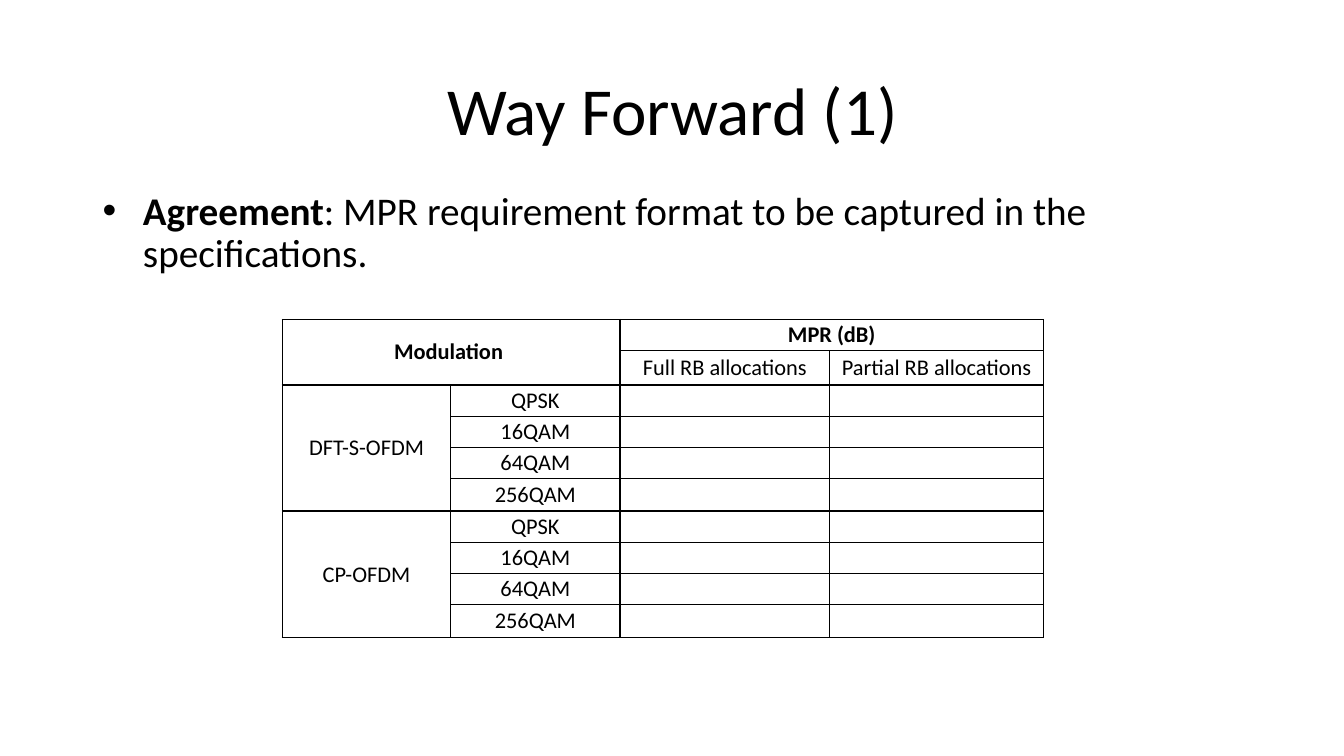
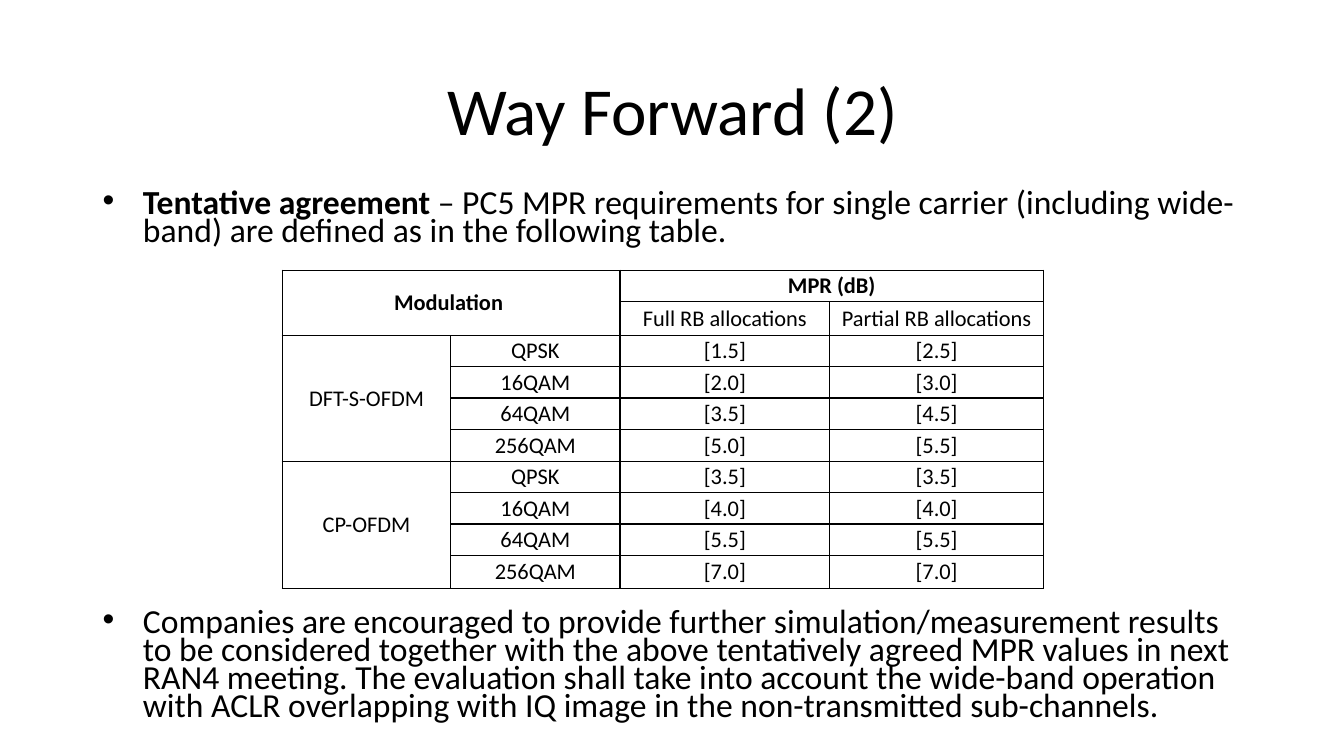
"""Build two slides on the MPR way forward, each with a requirement table."""
from itertools import product

from lxml.etree import SubElement
from pptx import Presentation
from pptx.dml.color import RGBColor
from pptx.enum.text import MSO_ANCHOR, MSO_AUTO_SIZE, PP_ALIGN
from pptx.oxml.ns import qn
from pptx.util import Inches, Pt

FONT = "Calibri"
INK = "000000"
LEFT, WIDTH = 0.92, 11.5
TITLE_BOX = (LEFT, 0.4, WIDTH, 1.45)

TABLE_LEFT = 2.8
COLUMN_WIDTHS = [1.67, 1.68, 2.08, 2.12]
ROW_HEIGHTS = [0.31, 0.34, 0.31, 0.31, 0.31, 0.32, 0.31, 0.31, 0.31, 0.33]
HEADER_ROWS = [
    ["Modulation ", "", "MPR (dB)", ""],
    ["", "", "Full RB allocations", "Partial RB allocations"],
]
WAVEFORMS = ["DFT-S-OFDM", "CP-OFDM"]
MODULATIONS = ["QPSK", "16QAM", "64QAM", "256QAM"]
MERGES = [((0, 0), (1, 1)), ((0, 2), (0, 3)), ((2, 0), (5, 0)), ((6, 0), (9, 0))]

SLIDES = [
    {
        "title": "Way Forward (1)",
        "size": 28,
        "spacing": 0.9,
        "bullets": [
            (1.85, 1.1, [
                ("Agreement", True),
                (": MPR requirement format to be captured in the specifications.", False),
            ]),
        ],
        "table_top": 3.17,
        "limits": [("", "")] * 8,
    },
    {
        "title": "Way Forward (2)",
        "size": 24,
        "spacing": 0.7,
        "bullets": [
            (1.85, 0.75, [
                ("Tentative agreement", True),
                (" – PC5 MPR requirements for single carrier (including wide-band) "
                 "are defined as in the following table.", False),
            ]),
            (6.01, 1.3, [
                ("Companies are encouraged to provide further simulation/measurement "
                 "results to be considered together with the above tentatively agreed "
                 "MPR values in next RAN4 meeting. The evaluation shall take into account "
                 "the wide-band operation with ACLR overlapping with IQ image in the "
                 "non-transmitted sub-channels.", False),
            ]),
        ],
        "table_top": 2.68,
        "limits": [
            ("[1.5]", "[2.5]"), ("[2.0]", "[3.0]"), ("[3.5]", "[4.5]"), ("[5.0]", "[5.5]"),
            ("[3.5]", "[3.5]"), ("[4.0]", "[4.0]"), ("[5.5]", "[5.5]"), ("[7.0]", "[7.0]"),
        ],
    },
]


def color(value):
    return RGBColor.from_string(value)


def add_run(paragraph, text, size, bold=False):
    run = paragraph.add_run()
    run.text = text
    run.font.name = FONT
    run.font.size = Pt(size)
    run.font.bold = bold
    run.font.color.rgb = color(INK)


def add_title(slide, text):
    title = slide.shapes.title
    title.left, title.top, title.width, title.height = map(Inches, TITLE_BOX)
    frame = title.text_frame
    frame.auto_size = MSO_AUTO_SIZE.NONE
    frame.vertical_anchor = MSO_ANCHOR.MIDDLE
    heading = frame.paragraphs[0]
    heading.alignment = PP_ALIGN.CENTER
    heading.line_spacing = 0.9
    add_run(heading, text, 48)


def add_bullet(slide, top, height, parts, size, spacing):
    box = slide.shapes.add_textbox(*map(Inches, (LEFT, top, WIDTH, height)))
    box.text_frame.word_wrap = True
    bullet = box.text_frame.paragraphs[0]
    bullet.line_spacing = spacing
    properties = bullet._p.get_or_add_pPr()
    properties.set("marL", str(Inches(0.4)))
    properties.set("indent", str(-Inches(0.4)))
    SubElement(properties, qn("a:buFont"), typeface="Arial")
    SubElement(properties, qn("a:buChar"), char="•")
    for text, bold in parts:
        add_run(bullet, text, size, bold)


def outline(cell):
    properties = cell._tc.get_or_add_tcPr()
    for side in ("lnL", "lnR", "lnT", "lnB"):
        line = SubElement(properties, qn(f"a:{side}"), w=str(Pt(1)))
        SubElement(SubElement(line, qn("a:solidFill")), qn("a:srgbClr"), val=INK)


def fill_cell(cell, text, bold):
    outline(cell)
    cell.fill.background()
    cell.vertical_anchor = MSO_ANCHOR.MIDDLE
    cell.margin_left = cell.margin_right = Inches(0.07)
    cell.margin_top = cell.margin_bottom = 0
    paragraph = cell.text_frame.paragraphs[0]
    paragraph.alignment = PP_ALIGN.CENTER
    if text:
        add_run(paragraph, text, 16, bold)


def add_requirements(slide, top, limits):
    schemes = product(WAVEFORMS, MODULATIONS)
    rows = HEADER_ROWS + [
        [waveform if modulation == MODULATIONS[0] else "", modulation, *pair]
        for (waveform, modulation), pair in zip(schemes, limits)
    ]
    bounds = (TABLE_LEFT, top, sum(COLUMN_WIDTHS), sum(ROW_HEIGHTS))
    table = slide.shapes.add_table(
        len(rows), len(COLUMN_WIDTHS), *map(Inches, bounds)).table
    table.first_row = table.horz_banding = False
    for column, width in zip(table.columns, COLUMN_WIDTHS):
        column.width = Inches(width)
    for row, height in zip(table.rows, ROW_HEIGHTS):
        row.height = Inches(height)
    for r, texts in enumerate(rows):
        for c, text in enumerate(texts):
            fill_cell(table.cell(r, c), text, bold=r == 0)
    for first, last in MERGES:
        table.cell(*first).merge(table.cell(*last))


def main():
    deck = Presentation()
    deck.slide_width, deck.slide_height = Inches(13.33), Inches(7.5)
    for content in SLIDES:
        slide = deck.slides.add_slide(deck.slide_layouts[5])
        add_title(slide, content["title"])
        for top, height, parts in content["bullets"]:
            add_bullet(slide, top, height, parts, content["size"], content["spacing"])
        add_requirements(slide, content["table_top"], content["limits"])
    deck.save("out.pptx")


if __name__ == "__main__":
    main()
